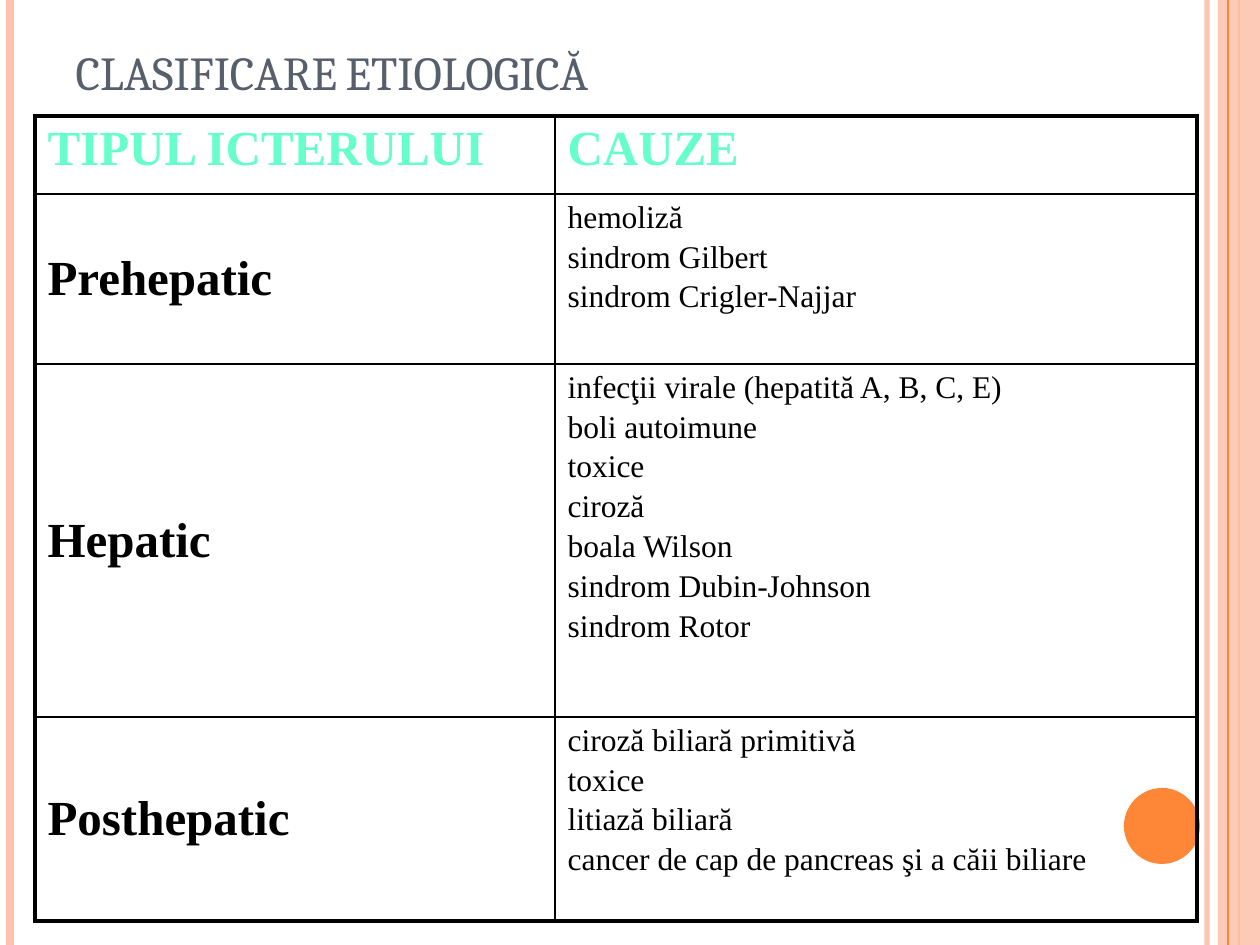
from lxml import etree
from pptx import Presentation
from pptx.dml.color import RGBColor
from pptx.enum.shapes import MSO_CONNECTOR, MSO_SHAPE
from pptx.enum.text import MSO_ANCHOR, MSO_AUTO_SIZE, PP_ALIGN
from pptx.oxml.ns import qn
from pptx.util import Pt

PX = 914400 / 126
WIDTH, HEIGHT = 1260, 945
COLORS = {"peach": "FEC3AE", "orange": "FE8637", "slate": "575F6D",
          "mint": "66FFCC", "black": "000000"}


def emu(*lengths):
    """Turn px lengths into EMU."""
    return [round(length * PX) for length in lengths]


def paint(fill, color, opacity=100):
    """Fill with a solid colour, see-through below 100 per cent."""
    fill.solid()
    fill.fore_color.rgb = RGBColor.from_string(COLORS[color])
    if opacity < 100:
        for tone in fill._xPr.iter(qn("a:srgbClr")):
            etree.SubElement(tone, qn("a:alpha"), val=str(opacity * 1000))


deck = Presentation()
deck.slide_width, deck.slide_height = emu(WIDTH, HEIGHT)
page = deck.slides.add_slide(deck.slide_layouts[5])

# Side stripes and the round badge, from back to front
decorations = [
    ("stripe", 1207, "peach", 3, 93),
    ("stripe", 10, "peach", 4.5, 100),
    ("stripe", 1239, "orange", 1.5, 100),
    (MSO_SHAPE.RECTANGLE, (1218, 0, 42, HEIGHT), "peach", 0, 87),
    ("stripe", 1228, "orange", 0.75, 100),
    (MSO_SHAPE.OVAL, (1124, 788, 76, 76), "orange", 0, 100),
]
for kind, place, color, weight, opacity in decorations:
    if kind == "stripe":
        stripe = page.shapes.add_connector(
            MSO_CONNECTOR.STRAIGHT, *emu(place, 0, place, HEIGHT))
        stripe.line.width = Pt(weight)
        paint(stripe.line.fill, color, opacity)
        etree.SubElement(stripe._element.spPr, qn("a:effectLst"))
    else:
        shape = page.shapes.add_shape(kind, *emu(*place))
        shape.shadow.inherit = False
        shape.line.fill.background()
        paint(shape.fill, color, opacity)

# Title
title = page.shapes.title
title.left, title.top, title.width, title.height = emu(63, 38, 1029, 68)
frame = title.text_frame
frame.text = "CLASIFICARE ETIOLOGICĂ"
frame.auto_size = MSO_AUTO_SIZE.NONE
frame.vertical_anchor = MSO_ANCHOR.BOTTOM
para = frame.paragraphs[0]
para.alignment = PP_ALIGN.LEFT
span = para.runs[0]
span.font.name, span.font.size = "Cambria", Pt(27)
paint(span.font.fill, "slate")
span.font._element.set("cap", "small")

# Table of jaundice types and their causes
COLUMNS = [520, 642]
ROWS = [78, 170, 353, 204]
CONTENT = [
    ("TIPUL ICTERULUI", ["CAUZE"]),
    ("Prehepatic", ["hemoliză", "sindrom Gilbert", "sindrom Crigler-Najjar"]),
    ("Hepatic", ["infecţii virale (hepatită A, B, C, E)", "boli autoimune",
                 "toxice", "ciroză", "boala Wilson", "sindrom Dubin-Johnson",
                 "sindrom Rotor"]),
    ("Posthepatic", ["ciroză biliară primitivă", "toxice", "litiază biliară",
                     "cancer de cap de pancreas şi a căii biliare"]),
]
HEADER = {"size": Pt(28), "bold": True, "color": "mint"}
TYPE = {"size": Pt(28), "bold": True, "color": "black"}
CAUSE = {"size": Pt(18), "bold": False, "color": "black"}

table = page.shapes.add_table(
    len(ROWS), len(COLUMNS), *emu(35, 116, sum(COLUMNS), sum(ROWS))).table
table.first_row = table.horz_banding = False
for column, width in zip(table.columns, emu(*COLUMNS)):
    column.width = width
for row, height in zip(table.rows, emu(*ROWS)):
    row.height = height

last_row, last_column = len(ROWS) - 1, len(COLUMNS) - 1
for r, (jaundice, causes) in enumerate(CONTENT):
    for c, lines in enumerate([[jaundice], causes]):
        cell = table.cell(r, c)
        look = HEADER if r == 0 else (TYPE, CAUSE)[c]
        if look is TYPE:
            cell.vertical_anchor = MSO_ANCHOR.MIDDLE
        cell.text = "\n".join(lines)
        for i, para in enumerate(cell.text_frame.paragraphs):
            para.space_before = Pt(2.8 if i else 0)
            font = para.runs[0].font
            font.name, font.size, font.bold = (
                "Times New Roman", look["size"], look["bold"])
            paint(font.fill, look["color"])

        outer = {"L": c == 0, "R": c == last_column,
                 "T": r == 0, "B": r == last_row}
        properties = cell._tc.get_or_add_tcPr()
        for side, is_outer in outer.items():
            border = etree.SubElement(properties, qn(f"a:ln{side}"),
                                      w=str(Pt(2.25 if is_outer else 1)))
            solid = etree.SubElement(border, qn("a:solidFill"))
            etree.SubElement(solid, qn("a:srgbClr"), val=COLORS["black"])
        cell.fill.background()

deck.save("out.pptx")
